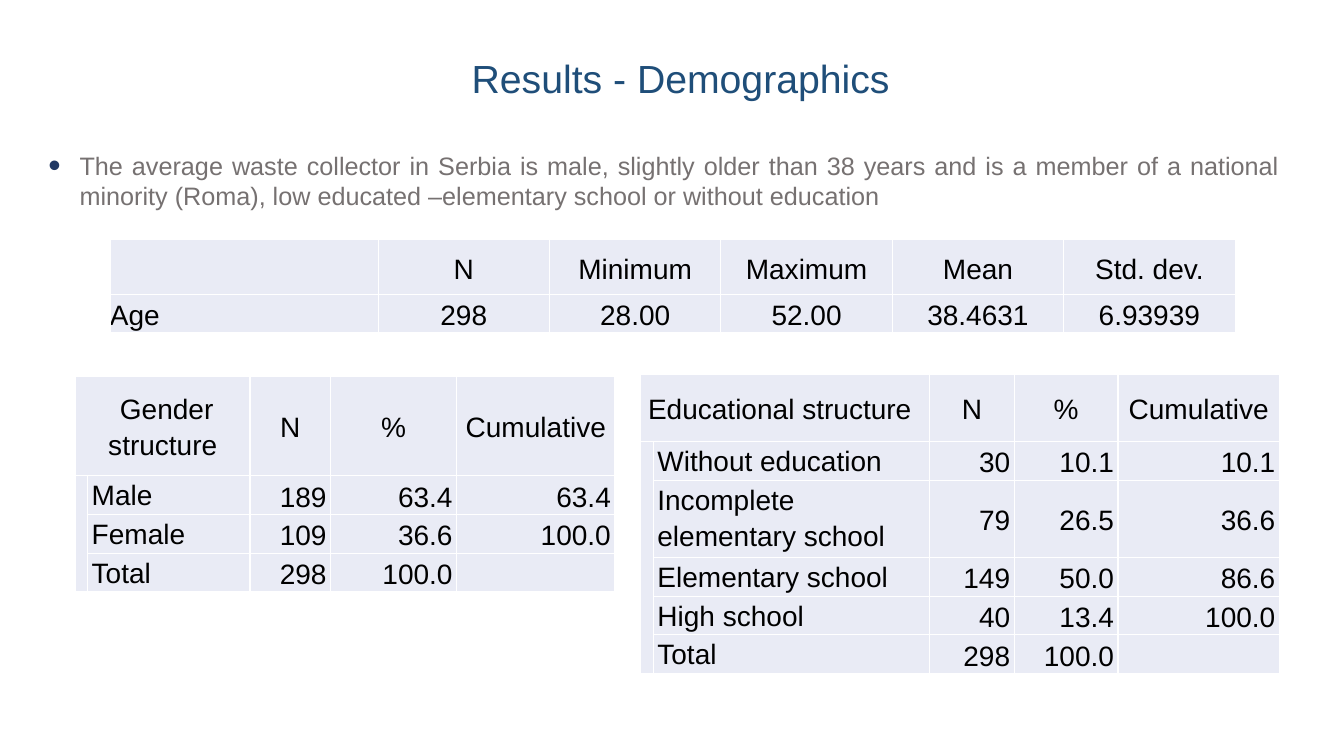
from pptx import Presentation
from pptx.dml.color import RGBColor
from pptx.enum.text import MSO_ANCHOR, PP_ALIGN
from pptx.oxml.ns import qn
from pptx.util import Inches, Pt
from lxml.etree import SubElement

BLUE = RGBColor(0x1F, 0x4E, 0x79)
NAVY = RGBColor(0x20, 0x38, 0x64)
GREY = RGBColor(0x76, 0x71, 0x71)
BLACK = RGBColor(0, 0, 0)
PALE = RGBColor(0xE9, 0xEB, 0xF5)

LEFT, MID, RIGHT = PP_ALIGN.LEFT, PP_ALIGN.CENTER, PP_ALIGN.RIGHT
FLUSH = dict.fromkeys(
    ("margin_left", "margin_top", "margin_right", "margin_bottom"), 0)
LINE = 0.36
PAD = 0.04

AGE = [
    ["", "N", "Minimum", "Maximum", "Mean", "Std. dev."],
    ["Age", "298", "28.00", "52.00", "38.4631", "6.93939"],
]
GENDER = [
    [" Gender structure", "N", "%", "Cumulative"],
    ["Male", "189", "63.4", "63.4"],
    ["Female", "109", "36.6", "100.0"],
    ["Total", "298", "100.0", ""],
]
SCHOOL = [
    [" Educational structure", "N", "%", "Cumulative"],
    ["Without education", "30", "10.1", "10.1"],
    ["Incomplete elementary school", "79", "26.5", "36.6"],
    ["Elementary school", "149", "50.0", "86.6"],
    ["High school", "40", "13.4", "100.0"],
    ["Total", "298", "100.0", ""],
]


def apply(target, values):
    """Set each named attribute of the target."""
    for name, value in values.items():
        setattr(target, name, value)


def write(para, text, size, color, align, space=1.0):
    apply(para, {"alignment": align, "line_spacing": space})
    run = para.add_run()
    run.text = text
    apply(run.font, {"name": "Arial", "size": Pt(size)})
    run.font.color.rgb = color


def add_box(slide, box, anchor):
    """Add a text box without margins and return its first paragraph."""
    frame = slide.shapes.add_textbox(*map(Inches, box)).text_frame
    apply(frame, {**FLUSH, "word_wrap": True, "vertical_anchor": anchor})
    return frame.paragraphs[0]


def add_title(slide, box):
    para = add_box(slide, box, MSO_ANCHOR.MIDDLE)
    write(para, "Results - Demographics", 28, BLUE, MID, 0.9)


def add_point(slide, box):
    para = add_box(slide, box, MSO_ANCHOR.TOP)
    props = para._p.get_or_add_pPr()
    props.set("marL", str(Inches(0.31)))
    props.set("indent", str(-Inches(0.31)))
    tint = SubElement(props, qn("a:buClr"))
    SubElement(tint, qn("a:srgbClr"), val=str(NAVY))
    SubElement(props, qn("a:buSzPct"), val="140000")
    SubElement(props, qn("a:buFont"), typeface="Arial")
    SubElement(props, qn("a:buChar"), char="•")
    write(para, "The average waste collector in Serbia is male, slightly older "
          "than 38 years and is a member of a national minority (Roma), low "
          "educated –elementary school or without education",
          18, GREY, PP_ALIGN.JUSTIFY)


def fill_cell(cell, text, align, anchor=MSO_ANCHOR.MIDDLE, pad=0):
    apply(cell, {**FLUSH, "vertical_anchor": anchor})
    if not text:
        return
    para = cell.text_frame.paragraphs[0]
    if pad:
        props = para._p.get_or_add_pPr()
        for side in ("marL", "marR"):
            props.set(side, str(Inches(pad)))
    write(para, text, 20, BLACK, align, 1.15)


def add_grid(slide, left, top, widths, heights):
    """Add a plain table with every cell filled."""
    table = slide.shapes.add_table(
        len(heights), len(widths), Inches(left), Inches(top),
        Inches(sum(widths)), Inches(sum(heights))).table
    apply(table, {"first_row": False, "horz_banding": False})
    for col, width in zip(table.columns, widths):
        col.width = Inches(width)
    for row, height in zip(table.rows, heights):
        row.height = Inches(height)
    for cell in table.iter_cells():
        apply(cell, FLUSH)
        cell.fill.solid()
        cell.fill.fore_color.rgb = PALE
    return table


def add_age(slide, left, top):
    table = add_grid(slide, left, top, [2.66] + [1.7] * 5, [0.54, LINE])
    for r, row in enumerate(AGE):
        for c, text in enumerate(row):
            fill_cell(table.cell(r, c), text, MID if c else PP_ALIGN.JUSTIFY)


def add_counts(slide, left, top, widths, heights, rows, align):
    """Add a frequency table whose head spans a narrow stub column."""
    table = add_grid(slide, left, top, widths, heights)
    table.cell(0, 0).merge(table.cell(0, 1))
    table.cell(1, 0).merge(table.cell(len(rows) - 1, 0))
    head, *body = rows
    fill_cell(table.cell(0, 0), head[0], align)
    for c, text in enumerate(head[1:], 2):
        fill_cell(table.cell(0, c), text, MID, pad=PAD)
    for r, (label, *values) in enumerate(body, 1):
        fill_cell(table.cell(r, 1), label, LEFT, MSO_ANCHOR.TOP, PAD)
        for c, text in enumerate(values, 2):
            fill_cell(table.cell(r, c), text, RIGHT, pad=PAD)


def main():
    deck = Presentation()
    apply(deck, {"slide_width": Inches(13.33), "slide_height": Inches(7.5)})
    slide = deck.slides.add_slide(deck.slide_layouts[6])
    add_title(slide, (1.26, 0.54, 10.98, 0.53))
    add_point(slide, (0.48, 1.49, 12.21, 5.37))
    add_age(slide, 1.09, 2.38)
    add_counts(slide, 0.75, 3.73, [0.12, 1.61, 0.8, 1.25, 1.57],
               [0.99] + [LINE] * 3, GENDER, MID)
    add_counts(slide, 6.35, 3.71, [0.13, 2.74, 0.84, 1.03, 1.6],
               [0.67, LINE, 2 * LINE] + [LINE] * 3, SCHOOL, LEFT)
    deck.save("out.pptx")


if __name__ == "__main__":
    main()
